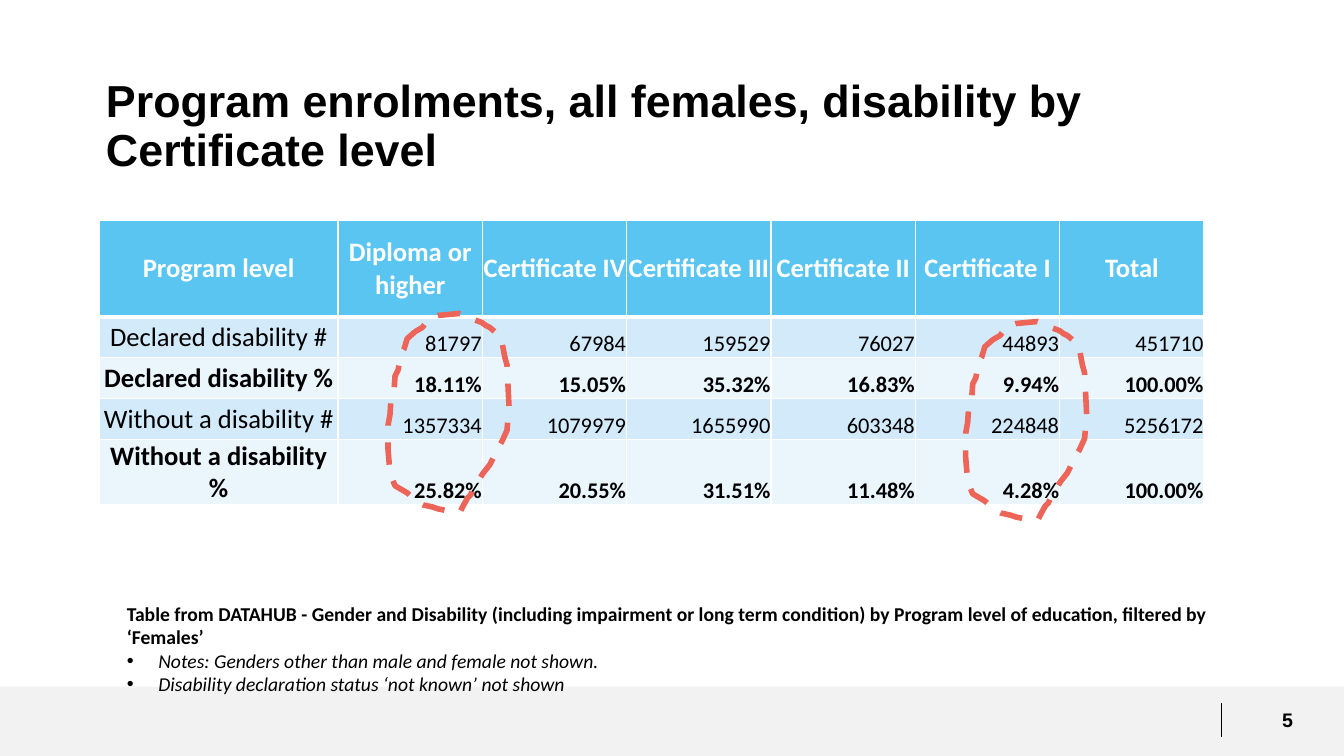
from lxml import etree
from pptx import Presentation
from pptx import util as u
from pptx.dml.color import RGBColor
from pptx.enum import dml, shapes, text
from pptx.oxml import ns

Pt = u.Pt
BLACK = RGBColor(0x00, 0x00, 0x00)
WHITE = RGBColor(0xFF, 0xFF, 0xFF)
FOOTER_GREY = RGBColor(0xF2, 0xF2, 0xF2)
HEADER_BLUE = RGBColor(0x5B, 0xC5, 0xF2)
BAND_BLUE = RGBColor(0xD2, 0xEA, 0xFA)
BAND_PALE = RGBColor(0xEA, 0xF5, 0xFC)
RING_RED = RGBColor(0xEC, 0x65, 0x58)


def format_runs(paragraph, name, size, color=BLACK, bold=False, italic=False):
    for run in paragraph.runs:
        font = run.font
        font.name, font.size, font.bold, font.italic = name, Pt(size), bold, italic
        font.color.rgb = color


def add_text(slide, left, top, width, height, lines):
    frame = slide.shapes.add_textbox(Pt(left), Pt(top), Pt(width), Pt(height)).text_frame
    frame.word_wrap = True
    frame.text = "\n".join(lines)
    return frame


presentation = Presentation()
presentation.slide_width, presentation.slide_height = Pt(960), Pt(540)
slide = presentation.slides.add_slide(presentation.slide_layouts[6])

footer = slide.shapes.add_shape(shapes.MSO_SHAPE.RECTANGLE, 0, Pt(490.5), Pt(960), Pt(49.5))
footer.shadow.inherit = False
footer.fill.solid()
footer.fill.fore_color.rgb = FOOTER_GREY
footer.line.fill.background()

number = add_text(slide, 879, 502, 81.4, 24.5, ["5"]).paragraphs[0]
number.alignment = text.PP_ALIGN.CENTER
format_runs(number, "Arial", 14, bold=True)

divider = slide.shapes.add_connector(
    shapes.MSO_CONNECTOR.STRAIGHT, Pt(872.6), Pt(502.5), Pt(872.6), Pt(526.5))
divider.line.color.rgb = BLACK
divider.line.width = Pt(0.75)
etree.SubElement(divider.element.spPr, ns.qn("a:effectLst"))

title = add_text(slide, 72.7, 53.3, 805.7, 75.6,
                 ["Program enrolments, all females, disability by Certificate level"])
title.margin_left = title.margin_right = title.margin_top = title.margin_bottom = Pt(3)
title.vertical_anchor = text.MSO_ANCHOR.MIDDLE
title.paragraphs[0].line_spacing = 0.9
format_runs(title.paragraphs[0], "Arial", 32, bold=True)

notes = add_text(slide, 83.5, 426.2, 835.9, 74.9, [
    "Table from DATAHUB - Gender and Disability (including impairment or long term condition) "
    "by Program level of education, filtered by ‘Females’",
    "Notes: Genders other than male and female not shown.",
    "Disability declaration status ‘not known’ not shown",
])
format_runs(notes.paragraphs[0], "Calibri", 14, bold=True)
for paragraph in notes.paragraphs[1:]:
    format_runs(paragraph, "Calibri", 14, italic=True)
    properties = paragraph._p.get_or_add_pPr()
    properties.set("marL", str(Pt(22.5)))
    properties.set("indent", str(-Pt(22.5)))
    etree.SubElement(properties, ns.qn("a:buFont"), typeface="Arial")
    etree.SubElement(properties, ns.qn("a:buChar"), char="•")

enrolments = [
    ["Program level", "Diploma or higher", "Certificate IV", "Certificate III",
     "Certificate II", "Certificate I", "Total"],
    ["Declared disability #", "81797", "67984", "159529", "76027", "44893", "451710"],
    ["Declared disability %", "18.11%", "15.05%", "35.32%", "16.83%", "9.94%", "100.00%"],
    ["Without a disability #", "1357334", "1079979", "1655990", "603348", "224848", "5256172"],
    ["Without a disability %", "25.82%", "20.55%", "31.51%", "11.48%", "4.28%", "100.00%"],
]
table = slide.shapes.add_table(5, 7, Pt(70.9), Pt(157.4), Pt(789.2), Pt(186)).table
for index, column in enumerate(table.columns):
    column.width = Pt(103.1 if index else 170.6)
for index, row in enumerate(table.rows):
    row.height = Pt(29.3 if index else 68.8)

for row, values in enumerate(enrolments):
    for column, value in enumerate(values):
        cell = table.cell(row, column)
        cell.text = value
        cell.margin_left = cell.margin_right = cell.margin_top = Pt(0.5)
        cell.margin_bottom = 0
        is_header = row == 0
        is_number = row > 0 and column > 0
        paragraph = cell.text_frame.paragraphs[0]
        paragraph.alignment = text.PP_ALIGN.RIGHT if is_number else text.PP_ALIGN.CENTER
        cell.vertical_anchor = text.MSO_ANCHOR.BOTTOM if is_number else text.MSO_ANCHOR.MIDDLE
        format_runs(paragraph, "Calibri", 16 if is_number else 19,
                    WHITE if is_header else BLACK, bold=row % 2 == 0)
        properties = cell._tc.get_or_add_tcPr()
        for side in ("L", "R", "T", "B"):
            thick = (row, side) in ((0, "B"), (1, "T"))
            border = etree.SubElement(properties, ns.qn("a:ln" + side), w=str(Pt(3 if thick else 1)))
            border_fill = etree.SubElement(border, ns.qn("a:solidFill"))
            etree.SubElement(border_fill, ns.qn("a:srgbClr"), val=str(WHITE))
        cell.fill.solid()
        cell.fill.fore_color.rgb = HEADER_BLUE if is_header else BAND_BLUE if row % 2 else BAND_PALE

ring_points = [
    (27, 18), (19, 25), (16, 35), (13, 40), (10, 56), (7, 62), (6, 76), (3, 84), (2, 100),
    (0, 111), (0, 135), (2, 159), (7, 171), (19, 178), (29, 187), (35, 190), (44, 192),
    (50, 194), (65, 197), (72, 196), (75, 190), (79, 183), (82, 180), (85, 173), (94, 159),
    (101, 150), (110, 132), (113, 127), (118, 116), (120, 92), (118, 51), (116, 44),
    (112, 23), (107, 19), (101, 14), (97, 12), (93, 9), (82, 5), (71, 0), (50, 2), (41, 5),
    (34, 14),
]
for left, top in ((689.8, 229.7), (277.2, 223.9)):
    builder = slide.shapes.build_freeform(*ring_points[0], scale=Pt(0.72))
    builder.add_line_segments(ring_points[1:], close=True)
    ring = builder.convert_to_shape(Pt(left), Pt(top))
    ring.shadow.inherit = False
    ring.fill.background()
    ring.line.color.rgb = RING_RED
    ring.line.width = Pt(4)
    ring.line.dash_style = dml.MSO_LINE.DASH

presentation.save("out.pptx")
